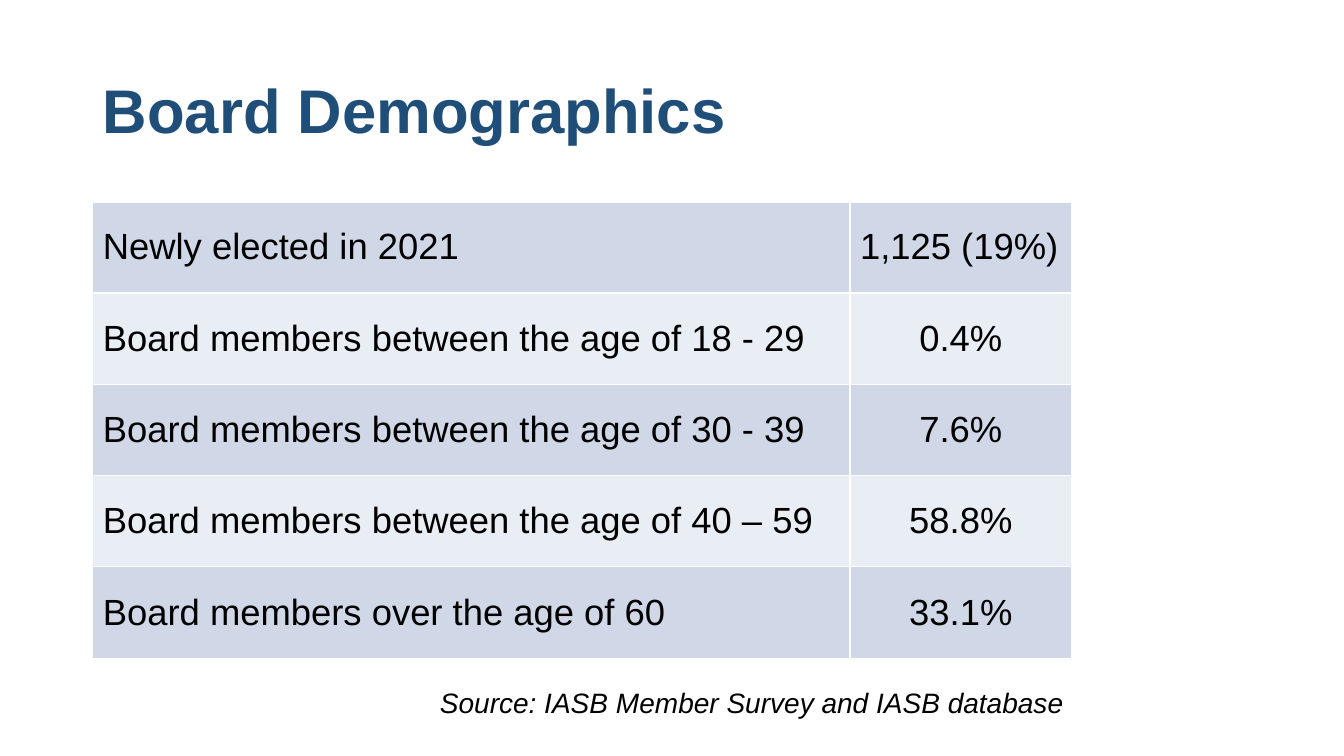
import dataclasses

import pptx
import pptx.dml.color
import pptx.enum.text
import pptx.oxml
import pptx.oxml.ns
import pptx.util

Inches, Pt = pptx.util.Inches, pptx.util.Pt
PP_ALIGN = pptx.enum.text.PP_ALIGN
MIDDLE = pptx.enum.text.MSO_ANCHOR.MIDDLE
BANDS = ("D0D8E8", "E9EDF4")
LEFT = 0.92


@dataclasses.dataclass
class Row:
    label: str
    value: str
    align: PP_ALIGN = PP_ALIGN.CENTER


ROWS = [
    Row("Newly elected in 2021", "1,125 (19%)", PP_ALIGN.LEFT),
    Row("Board members between the age of 18 - 29", "0.4%"),
    Row("Board members between the age of 30 - 39", "7.6%"),
    Row("Board members between the age of 40 – 59", "58.8%"),
    Row("Board members over the age of 60", "33.1%"),
]


def rgb(color: str) -> pptx.dml.color.RGBColor:
    return pptx.dml.color.RGBColor.from_string(color)


def write(tf, text: str, align: PP_ALIGN, color: str = "000000", **formats) -> None:
    p = tf.paragraphs[0]
    p.alignment = align
    r = p.add_run()
    r.text = text
    r.font.color.rgb = rgb(color)
    for name, value in ({"name": "Arial"} | formats).items():
        setattr(r.font, name, value)


def add_border(cell, side: str, width: float) -> None:
    ns = pptx.oxml.ns.nsdecls("a")
    line = pptx.oxml.parse_xml(
        f'<a:{side} {ns} w="{Pt(width)}"><a:solidFill>'
        f'<a:srgbClr val="FFFFFF"/></a:solidFill></a:{side}>')
    # Border lines come before the fill
    tcPr = cell._tc.get_or_add_tcPr()
    tcPr.insert(len(tcPr.findall("*")) - 1, line)


def fill_cell(cell, text: str, align: PP_ALIGN, row: int) -> None:
    cell.vertical_anchor = MIDDLE
    cell.fill.solid()
    cell.fill.fore_color.rgb = rgb(BANDS[row % 2])
    for side in ("lnL", "lnR", "lnT", "lnB"):
        add_border(cell, side, 3 if side == "lnT" and row == 0 else 1)
    write(cell.text_frame, text, align, size=Pt(26))


def main() -> None:
    prs = pptx.Presentation()
    prs.slide_width, prs.slide_height = Inches(13.33), Inches(7.5)
    s = prs.slides.add_slide(prs.slide_layouts[5])

    # Title
    sp = s.shapes.title
    sp.left, sp.top = Inches(LEFT), Inches(0.4)
    sp.width, sp.height = Inches(11.5), Inches(1.45)
    tf = sp.text_frame
    tf.vertical_anchor = MIDDLE
    write(tf, "Board Demographics", PP_ALIGN.LEFT, "1F4E79", size=Pt(44), bold=True)
    tf.paragraphs[0].line_spacing = 0.9

    # Demographics table
    table = s.shapes.add_table(len(ROWS), 2, Inches(LEFT), Inches(2),
                               Inches(9.71), Inches(4.53)).table
    table.first_row = False
    for column, width in zip(table.columns, (7.51, 2.2)):
        column.width = Inches(width)
    for i, row in enumerate(ROWS):
        fill_cell(table.cell(i, 0), row.label, PP_ALIGN.LEFT, i)
        fill_cell(table.cell(i, 1), row.value, row.align, i)

    # Source line
    tf = s.shapes.add_textbox(Inches(3.98), Inches(6.75), Inches(6.67), Inches(0.44)).text_frame
    tf.word_wrap = True
    write(tf, "Source: IASB Member Survey and IASB database", PP_ALIGN.RIGHT,
          size=Pt(20), italic=True)

    prs.save("out.pptx")


if __name__ == "__main__":
    main()
